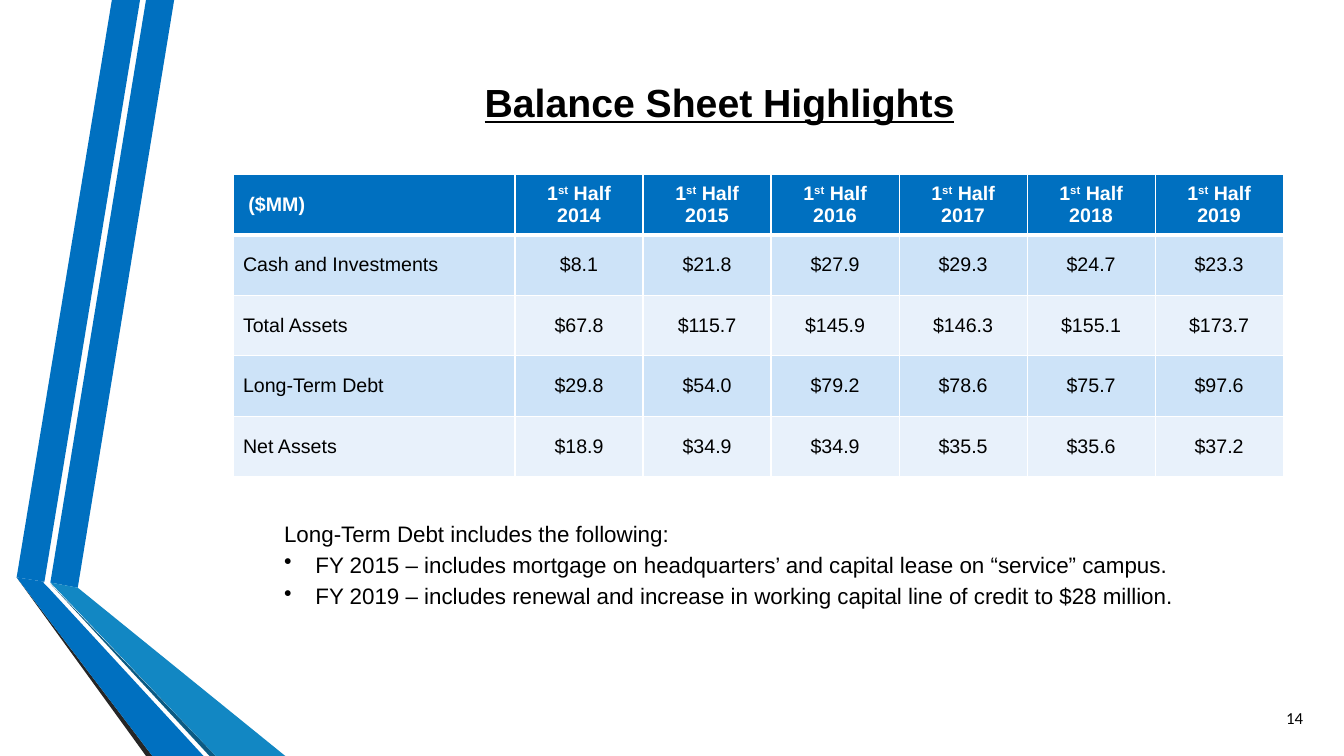
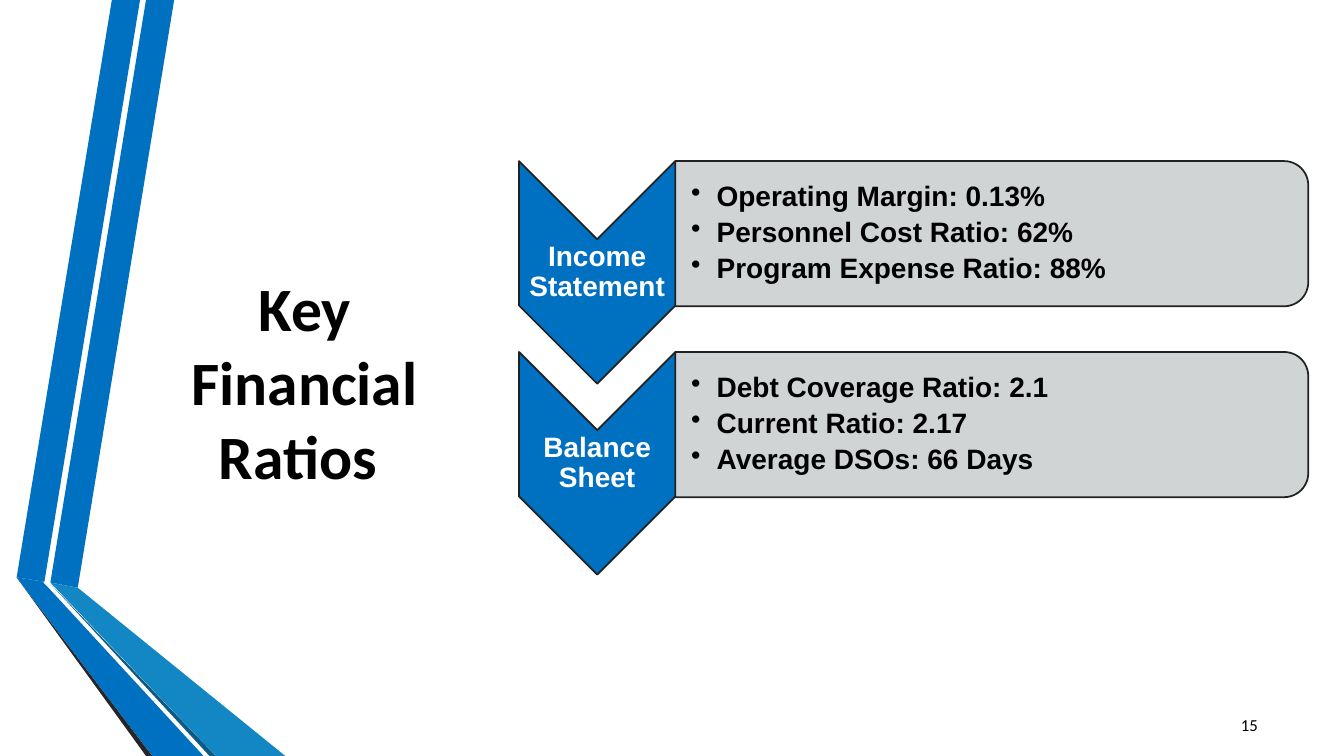
from dataclasses import dataclass

from lxml import etree
from pptx import Presentation
from pptx.dml.color import RGBColor
from pptx.enum.shapes import MSO_SHAPE
from pptx.enum.text import MSO_ANCHOR, PP_ALIGN
from pptx.oxml.ns import qn
from pptx.util import Cm, Pt

LEFT, CENTER, RIGHT = PP_ALIGN.LEFT, PP_ALIGN.CENTER, PP_ALIGN.RIGHT
TOP, MIDDLE = MSO_ANCHOR.TOP, MSO_ANCHOR.MIDDLE
CHEVRON, ROUND_TOP = MSO_SHAPE.CHEVRON, MSO_SHAPE.ROUND_2_SAME_RECTANGLE

BLUE, LIGHT_BLUE, DARK_BLUE = "0070C0", "1287C3", "0C5A82"
BLACK, WHITE, CHARCOAL, OUTLINE, GREY = "000000", "FFFFFF", "262626", "212121", "CDD0D1"
ROW_FILLS = ("CDE3F8", "E8F1FB")


@dataclass(frozen=True)
class Style:
    size: float
    font: str = "Arial"
    color: str = BLACK
    bold: bool = False
    underline: bool = False


@dataclass(frozen=True)
class Run:
    text: str
    superscript: bool = False


@dataclass(frozen=True)
class Para:
    runs: tuple[Run, ...]
    align: PP_ALIGN = LEFT
    before: float = 0
    after: float = 0
    line_spacing: float = 1.0
    bullet_indent: float = 0


@dataclass(frozen=True)
class Box:
    """Place and size in centimetres."""
    left: float
    top: float
    width: float
    height: float


@dataclass(frozen=True)
class Band:
    color: str
    points: tuple[tuple[float, float], ...]


@dataclass(frozen=True)
class RatioGroup:
    name: str
    ratios: tuple[str, ...]


BANDS = (
    Band(BLUE, ((1.27, 14.68), (1.96, 14.81), (4.39, 0), (3.68, 0))),
    Band(BLUE, ((3.53, 0), (2.82, 0), (0.42, 14.55), (1.12, 14.66))),
    Band(CHARCOAL, ((0.42, 14.55), (3.68, 19.05), (3.84, 19.05))),
    Band(DARK_BLUE, ((1.27, 14.71), (5.28, 19.05), (5.44, 19.05))),
    Band(LIGHT_BLUE, ((1.27, 14.68), (5.44, 19.05), (7.19, 19.05), (1.96, 14.81))),
    Band(BLUE, ((5.13, 19.05), (1.22, 14.81), (1.09, 14.68), (1.12, 14.66),
                (0.42, 14.55), (3.84, 19.05))),
)

YEARS = range(2014, 2020)
BALANCES = (
    ("Cash and Investments", (8.1, 21.8, 27.9, 29.3, 24.7, 23.3)),
    ("Total Assets", (67.8, 115.7, 145.9, 146.3, 155.1, 173.7)),
    ("Long-Term Debt", (29.8, 54.0, 79.2, 78.6, 75.7, 97.6)),
    ("Net Assets", (18.9, 34.9, 34.9, 35.5, 35.6, 37.2)),
)
DEBT_NOTES = (
    "FY 2015 – includes mortgage on headquarters’ and capital lease on “service” campus.",
    "FY 2019 – includes renewal and increase in working capital line of credit to $28 million.",
)
RATIO_GROUPS = (
    RatioGroup("Income Statement", ("Operating Margin: 0.13%", "Personnel Cost Ratio: 62%",
                                    "Program Expense Ratio: 88%")),
    RatioGroup("Balance Sheet", ("Debt Coverage Ratio: 2.1", "Current Ratio: 2.17",
                                 "Average DSOs: 66 Days")),
)


def rgb(color: str) -> RGBColor:
    return RGBColor.from_string(color)


def para(text: str, **options) -> Para:
    return Para((Run(text),), **options)


def write(tf, paras: list[Para], style: Style) -> None:
    for i, item in enumerate(paras):
        p = tf.paragraphs[0] if i == 0 else tf.add_paragraph()
        p.alignment = item.align
        p.space_before, p.space_after = Pt(item.before), Pt(item.after)
        p.line_spacing = item.line_spacing
        if item.bullet_indent:
            props = p._p.get_or_add_pPr()
            props.set("marL", str(Cm(item.bullet_indent)))
            props.set("indent", str(-Cm(item.bullet_indent)))
            etree.SubElement(props, qn("a:buChar")).set("char", "•")
        for piece in item.runs:
            r = p.add_run()
            r.text = piece.text
            r.font.name, r.font.size = style.font, Pt(style.size)
            r.font.bold, r.font.underline = style.bold, style.underline
            r.font.color.rgb = rgb(style.color)
            if piece.superscript:
                r.font._element.set("baseline", "30000")


def add_text(slide, box: Box, paras: list[Para], style: Style, anchor: MSO_ANCHOR = MIDDLE,
             insets: tuple[float, float, float, float] = (0.25, 0.13, 0.25, 0.13)) -> None:
    """Add a text box; insets run left, top, right, bottom."""
    sp = slide.shapes.add_textbox(Cm(box.left), Cm(box.top), Cm(box.width), Cm(box.height))
    tf = sp.text_frame
    tf.word_wrap, tf.vertical_anchor = True, anchor
    tf.margin_left, tf.margin_top, tf.margin_right, tf.margin_bottom = map(Cm, insets)
    write(tf, paras, style)


def add_bands(slide) -> None:
    for band in BANDS:
        start, *rest = [(Cm(x), Cm(y)) for x, y in band.points]
        builder = slide.shapes.build_freeform(*start)
        builder.add_line_segments(rest, close=True)
        sp = builder.convert_to_shape()
        sp.shadow.inherit = False
        sp.fill.solid()
        sp.fill.fore_color.rgb = rgb(band.color)
        sp.line.fill.background()


def start_slide(prs, title: str, title_box: Box, title_style: Style,
                number: int, number_box: Box):
    """Add a blank slide with the bands, title and page number."""
    slide = prs.slides.add_slide(prs.slide_layouts[6])
    add_bands(slide)
    add_text(slide, title_box, [para(title, align=CENTER)], title_style)
    add_text(slide, number_box, [para(str(number), align=RIGHT)], Style(12, "Calibri"))
    return slide


def set_borders(cell, top: float, bottom: float) -> None:
    """Give a cell white borders, 1 pt wide at the sides."""
    props = cell._tc.get_or_add_tcPr()
    for side, width in (("L", 1), ("R", 1), ("T", top), ("B", bottom)):
        line = etree.SubElement(props, qn(f"a:ln{side}"), w=str(Pt(width)))
        fill = etree.SubElement(line, qn("a:solidFill"))
        etree.SubElement(fill, qn("a:srgbClr"), val=WHITE)


def add_balance_table(slide, box: Box, label_width: float) -> None:
    header = [para(" ($MM)")] + [
        Para((Run("1"), Run("st", True), Run(f" Half {year}")), CENTER) for year in YEARS]
    rows = [header] + [
        [para(name)] + [para(f"${value:.1f}", align=CENTER) for value in values]
        for name, values in BALANCES]
    table = slide.shapes.add_table(len(rows), len(header), Cm(box.left), Cm(box.top),
                                   Cm(box.width), Cm(box.height)).table
    for i, column in enumerate(table.columns):
        column.width = Cm((box.width - label_width) / len(YEARS) if i else label_width)
    for i, row in enumerate(rows):
        fill = ROW_FILLS[(i - 1) % 2] if i else BLUE
        style = Style(14) if i else Style(14, color=WHITE, bold=True)
        for j, item in enumerate(row):
            cell = table.cell(i, j)
            set_borders(cell, 3 if i == 1 else 1, 3 if i == 0 else 1)
            cell.fill.solid()
            cell.fill.fore_color.rgb = rgb(fill)
            cell.vertical_anchor = MIDDLE
            write(cell.text_frame, [item], style)


def add_turned_shape(slide, kind: MSO_SHAPE, box: Box, color: str, opacity: int = 100) -> None:
    """Add a preset turned by 90 degrees so that it covers the box as seen."""
    shift = (box.width - box.height) / 2
    sp = slide.shapes.add_shape(kind, Cm(box.left + shift), Cm(box.top - shift),
                                Cm(box.height), Cm(box.width))
    sp.rotation = 90
    sp.shadow.inherit = False
    sp.fill.solid()
    sp.fill.fore_color.rgb = rgb(color)
    sp.line.color.rgb = rgb(OUTLINE)
    sp.line.width = Pt(1.25)
    if opacity < 100:
        clr = sp._element.spPr.find(qn("a:solidFill")).find(qn("a:srgbClr"))
        etree.SubElement(clr, qn("a:alpha"), val=str(opacity * 1000))


def add_ratio_group(slide, group: RatioGroup, top: float) -> None:
    left, arrow_width = 13.08, 3.94
    panel_left = left + arrow_width
    add_turned_shape(slide, CHEVRON, Box(left, top, arrow_width, 5.61), BLUE)
    add_text(slide, Box(left, top + 1.96, arrow_width, 1.68),
             [para(group.name, align=CENTER, after=7, line_spacing=0.9)],
             Style(20, color=WHITE, bold=True), insets=(0.03,) * 4)
    add_turned_shape(slide, ROUND_TOP, Box(panel_left, top, 15.95, 3.66), GREY, opacity=90)
    add_text(slide, Box(panel_left, top + 0.18, 15.77, 3.3),
             [para(ratio, after=4, line_spacing=0.9, bullet_indent=0.64)
              for ratio in group.ratios],
             Style(20, bold=True), insets=(0.4, 0.03, 0.03, 0.03))


def balance_sheet_slide(prs) -> None:
    slide = start_slide(prs, "Balance Sheet Highlights", Box(5.74, 1.73, 24.79, 1.68),
                        Style(28, bold=True, underline=True), 14, Box(31.57, 17.58, 1.52, 1.02))
    add_balance_table(slide, Box(5.87, 4.39, 26.47, 7.62), label_width=7.11)
    notes = [para("Long-Term Debt includes the following:", before=3)]
    notes += [para(note, before=3, bullet_indent=0.79) for note in DEBT_NOTES]
    add_text(slide, Box(6.91, 12.98, 22.99, 2.51), notes, Style(16), TOP)


def key_ratios_slide(prs) -> None:
    slide = start_slide(prs, "Key Financial Ratios ", Box(4.11, 1.9, 7.14, 15.39),
                        Style(44, "Calibri", bold=True), 15, Box(30.43, 17.75, 1.52, 1.02))
    for i, group in enumerate(RATIO_GROUPS):
        add_ratio_group(slide, group, 4.06 + 4.81 * i)


def main() -> None:
    prs = Presentation()
    prs.slide_width, prs.slide_height = Cm(33.87), Cm(19.05)
    balance_sheet_slide(prs)
    key_ratios_slide(prs)
    prs.save("out.pptx")


if __name__ == "__main__":
    main()
